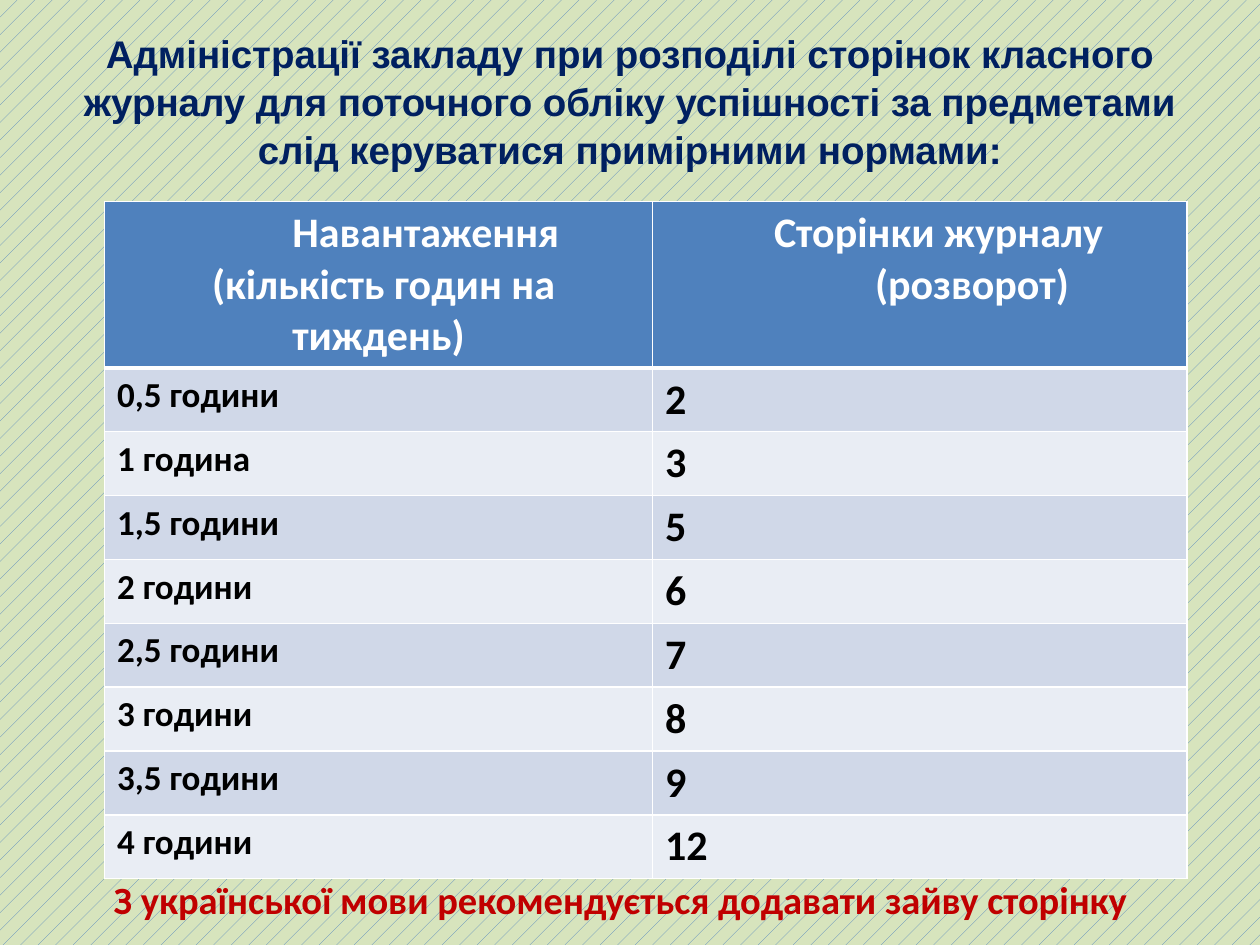
from lxml.etree import SubElement as Sub
from pptx import Presentation
from pptx.dml.color import RGBColor as RGB
from pptx.enum.dml import MSO_PATTERN as Pattern
from pptx.enum.text import MSO_ANCHOR as Anchor, PP_ALIGN as Align
from pptx.oxml.ns import qn
from pptx.util import Inches, Pt

BLUE, WHITE, BLACK = "4F81BD", "FFFFFF", "000000"
BANDS = ("D0D8E8", "E9EDF4")
# Header lines with their first-line indents in inches
HEADS = (
    (("Навантаження", 0.75), ("(кількість годин на тиждень)", 0.08)),
    (("Сторінки журналу", 0.3), ("(розворот)", 0.83)),
)
ROWS = (
    ("0,5 години", "2"), ("1 година", "3"), ("1,5 години", "5"),
    ("2 години", "6"), ("2,5 години", "7"), ("3 години", "8"),
    ("3,5 години", "9"), ("4 години", "12"),
)


def color(code):
    return RGB.from_string(code)


def style(para, size, code, face="Calibri", align=Align.LEFT):
    font = para.font
    font.name, font.size, font.bold = face, Pt(size), True
    font.color.rgb = color(code)
    para.alignment = align


def add_back(slide):
    fill = slide.background.fill
    fill.patterned()
    fill.pattern = Pattern.PERCENT_5
    fill.fore_color.rgb = color(BLUE)
    fill.back_color.rgb = color("D7E4BD")


def add_text(slide, box, text, size, code, face="Calibri", anchor=Anchor.TOP):
    frame = slide.shapes.add_textbox(*map(Inches, box)).text_frame
    frame.word_wrap = True
    frame.vertical_anchor = anchor
    para = frame.paragraphs[0]
    para.text = text
    style(para, size, code, face, Align.CENTER)
    return para


def paint(cell, code, top=1, bottom=1):
    """Give a cell white borders and a solid fill."""
    props = cell._tc.get_or_add_tcPr()
    for side, width in (("L", 1), ("R", 1), ("T", top), ("B", bottom)):
        line = Sub(props, qn(f"a:ln{side}"), w=str(Pt(width)))
        Sub(Sub(line, qn("a:solidFill")), qn("a:srgbClr"), val=WHITE)
    cell.fill.solid()
    cell.fill.fore_color.rgb = color(code)


def fill_head(cell, lines):
    paint(cell, BLUE, bottom=3)
    frame = cell.text_frame
    frame.text = "\n".join(text for text, _ in lines)
    for para, (_, indent) in zip(frame.paragraphs, lines):
        style(para, 24, WHITE, align=Align.CENTER)
        para._p.get_or_add_pPr().set("indent", str(Inches(indent)))


def add_grid(slide):
    shape = slide.shapes.add_table(
        len(ROWS) + 1, 2, Inches(0.83), Inches(1.6), Inches(8.59), Inches(5.38))
    table = shape.table
    for col, width in zip(table.columns, (4.35, 4.24)):
        col.width = Inches(width)
    for num, row in enumerate(table.rows):
        row.height = Inches(0.507 if num else 1.32)
    for col, lines in enumerate(HEADS):
        fill_head(table.cell(0, col), lines)
    for num, row in enumerate(ROWS, 1):
        for col, (text, size) in enumerate(zip(row, (20, 24))):
            cell = table.cell(num, col)
            paint(cell, BANDS[(num - 1) % 2], top=3 if num == 1 else 1)
            cell.text = text
            style(cell.text_frame.paragraphs[0], size, BLACK)


def main():
    deck = Presentation()
    deck.slide_width, deck.slide_height = Inches(10), Inches(7.5)
    slide = deck.slides.add_slide(deck.slide_layouts[6])
    add_back(slide)
    title = add_text(
        slide, (0.5, 0.17, 9, 1.25),
        "Адміністрації закладу при розподілі сторінок класного журналу для "
        "поточного обліку успішності за предметами слід керуватися "
        "примірними нормами:", 22, "002060", "Arial", Anchor.MIDDLE)
    title.line_spacing = 1.04
    add_grid(slide)
    add_text(slide, (0.35, 6.9, 9.15, 0.47),
             "З української мови рекомендується додавати зайву сторінку",
             22, "C00000")
    deck.save("out.pptx")


if __name__ == "__main__":
    main()
